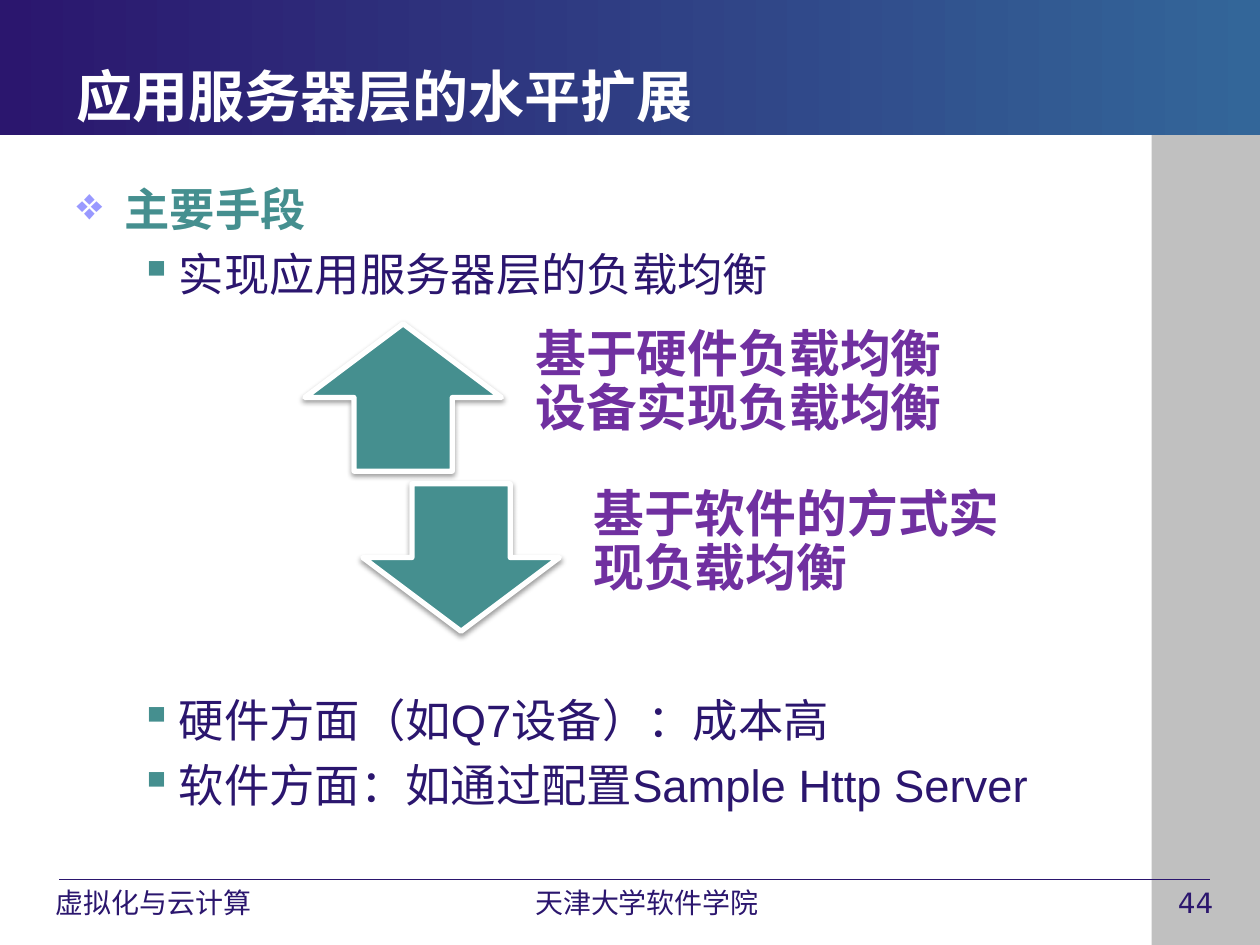
from dataclasses import dataclass
from typing import Optional

from lxml import etree
from pptx import Presentation
from pptx import util as u
from pptx.dml.color import RGBColor
from pptx.enum import shapes, text
from pptx.oxml.ns import qn


@dataclass(frozen=True)
class Theme:
    navy: str = "2B166E"
    blue: str = "336699"
    teal: str = "458F8F"
    lilac: str = "9999FF"
    purple: str = "7030A0"
    gray: str = "C0C0C0"
    white: str = "FFFFFF"
    black: str = "000000"
    font: str = "DejaVu Sans"
    latin_font: str = "Arial"
    title_size: float = 32
    body_size: float = 25.9
    option_size: float = 29
    footer_size: float = 16


THEME = Theme()


@dataclass(frozen=True)
class Style:
    size: float
    color: str
    bold: bool = False
    font: str = THEME.font


@dataclass(frozen=True)
class Box:
    left: float
    top: float
    width: float
    height: float

    def lengths(self) -> tuple:
        return tuple(u.Inches(v) for v in (self.left, self.top, self.width, self.height))


@dataclass(frozen=True)
class Footer:
    words: str
    box: Box
    align: Optional[text.PP_ALIGN] = None


@dataclass(frozen=True)
class Bullet:
    words: str
    style: Style
    mark: str
    mark_color: str
    margin: float
    hanging: float
    space_before: float = 6
    level: int = 0


@dataclass(frozen=True)
class Option:
    words: str
    arrow: shapes.MSO_SHAPE
    left: float
    top: float


TITLE = Style(THEME.title_size, THEME.white, True)
FOOTER = Style(THEME.footer_size, THEME.navy)
HEADING = Style(THEME.body_size, THEME.teal, True)
POINT = Style(THEME.body_size, THEME.navy, font=THEME.latin_font)
OPTION = Style(THEME.option_size, THEME.purple, True)

DIAGRAM_GAP = 224  # points left free for the arrows

FOOTERS = [
    Footer("44", Box(9.25, 6.98, 0.71, 0.35)),
    Footer("虚拟化与云计算", Box(0.25, 6.98, 1.94, 0.35), text.PP_ALIGN.CENTER),
    Footer("天津大学软件学院", Box(4.01, 6.98, 2.25, 0.35), text.PP_ALIGN.CENTER),
]


def point(words: str, space_before: float = 6) -> Bullet:
    return Bullet(words, POINT, "▪", THEME.teal, 0.81, 0.31, space_before, 1)


BULLETS = [
    Bullet("主要手段", HEADING, "❖", THEME.lilac, 0.38, 0.38),
    point("实现应用服务器层的负载均衡"),
    point("硬件方面（如Q7设备）：成本高", DIAGRAM_GAP),
    point("软件方面：如通过配置Sample Http Server"),
]

OPTIONS = [
    Option("基于硬件负载均衡设备实现负载均衡", shapes.MSO_SHAPE.UP_ARROW, 2.42, 2.57),
    Option("基于软件的方式实现负载均衡", shapes.MSO_SHAPE.DOWN_ARROW, 2.88, 3.84),
]


def rgb(color: str) -> RGBColor:
    return RGBColor.from_string(color)


def add_shape(slide, kind: shapes.MSO_SHAPE, box: Box, color: str):
    shape = slide.shapes.add_shape(kind, *box.lengths())
    shape.shadow.inherit = False
    shape.fill.solid()
    shape.fill.fore_color.rgb = rgb(color)
    shape.line.fill.background()
    return shape


def add_frame(slide, box: Box, anchor=text.MSO_ANCHOR.TOP):
    frame = slide.shapes.add_textbox(*box.lengths()).text_frame
    frame.word_wrap = True
    frame.vertical_anchor = anchor
    return frame


def add_run(paragraph, words: str, style: Style) -> None:
    run = paragraph.add_run()
    run.text = words
    run.font.size = u.Pt(style.size)
    run.font.name = style.font
    run.font.bold = style.bold
    run.font.color.rgb = rgb(style.color)


def set_bullet(paragraph, bullet: Bullet) -> None:
    properties = paragraph._p.get_or_add_pPr()
    properties.set("marL", str(u.Inches(bullet.margin)))
    properties.set("indent", str(-u.Inches(bullet.hanging)))
    color = etree.SubElement(properties, qn("a:buClr"))
    etree.SubElement(color, qn("a:srgbClr"), val=bullet.mark_color)
    etree.SubElement(properties, qn("a:buChar"), char=bullet.mark)


def add_soft_shadow(shape) -> None:
    effects = shape._element.spPr.find(qn("a:effectLst"))
    shadow = etree.SubElement(
        effects, qn("a:outerShdw"), blurRad=str(u.Pt(3.1)), dist=str(u.Pt(1.6)),
        dir="5400000", rotWithShape="0")
    color = etree.SubElement(shadow, qn("a:srgbClr"), val=THEME.black)
    etree.SubElement(color, qn("a:alpha"), val="38000")


def add_option(slide, option: Option) -> None:
    arrow = add_shape(slide, option.arrow, Box(option.left, option.top, 1.56, 1.17), THEME.teal)
    arrow.line.color.rgb = rgb(THEME.white)
    arrow.line.width = u.Pt(3)
    add_soft_shadow(arrow)

    frame = add_frame(slide, Box(option.left + 1.6, option.top, 3.88, 1.17), text.MSO_ANCHOR.MIDDLE)
    frame.margin_left = frame.margin_right = frame.margin_bottom = u.Inches(0.23)
    frame.margin_top = 0
    paragraph = frame.paragraphs[0]
    paragraph.line_spacing = 0.9
    add_run(paragraph, option.words, OPTION)


def add_background(slide) -> None:
    add_shape(slide, shapes.MSO_SHAPE.RECTANGLE, Box(9.14, 1.07, 0.86, 6.43), THEME.gray)
    rule = slide.shapes.add_connector(
        shapes.MSO_CONNECTOR.STRAIGHT, *Box(0.47, 6.98, 9.6, 6.98).lengths())
    rule.line.color.rgb = rgb(THEME.navy)
    rule.line.width = u.Pt(0.75)
    etree.SubElement(rule._element.spPr, qn("a:effectLst"))

    banner = add_shape(slide, shapes.MSO_SHAPE.RECTANGLE, Box(0, 0, 10, 1.07), THEME.navy)
    banner.fill.gradient()
    banner.fill.gradient_angle = 0
    for stop, color in zip(banner.fill.gradient_stops, (THEME.navy, THEME.blue)):
        stop.color.rgb = rgb(color)


def main() -> None:
    presentation = Presentation()
    presentation.slide_width, presentation.slide_height = u.Inches(10), u.Inches(7.5)
    slide = presentation.slides.add_slide(presentation.slide_layouts[6])

    # Background and footers
    add_background(slide)
    for footer in FOOTERS:
        paragraph = add_frame(slide, footer.box).paragraphs[0]
        paragraph.alignment = footer.align
        add_run(paragraph, footer.words, FOOTER)

    # Title
    title = add_frame(slide, Box(0.51, 0.13, 9, 1.25), text.MSO_ANCHOR.MIDDLE)
    add_run(title.paragraphs[0], "应用服务器层的水平扩展", TITLE)

    # Bullets above and below the diagram
    body = add_frame(slide, Box(0.51, 1.39, 8.59, 4.96))
    for index, bullet in enumerate(BULLETS):
        paragraph = body.add_paragraph() if index else body.paragraphs[0]
        paragraph.level = bullet.level
        paragraph.space_before = u.Pt(bullet.space_before)
        set_bullet(paragraph, bullet)
        add_run(paragraph, bullet.words, bullet.style)

    # Arrows with the two options
    for option in OPTIONS:
        add_option(slide, option)

    presentation.save("out.pptx")


if __name__ == "__main__":
    main()
